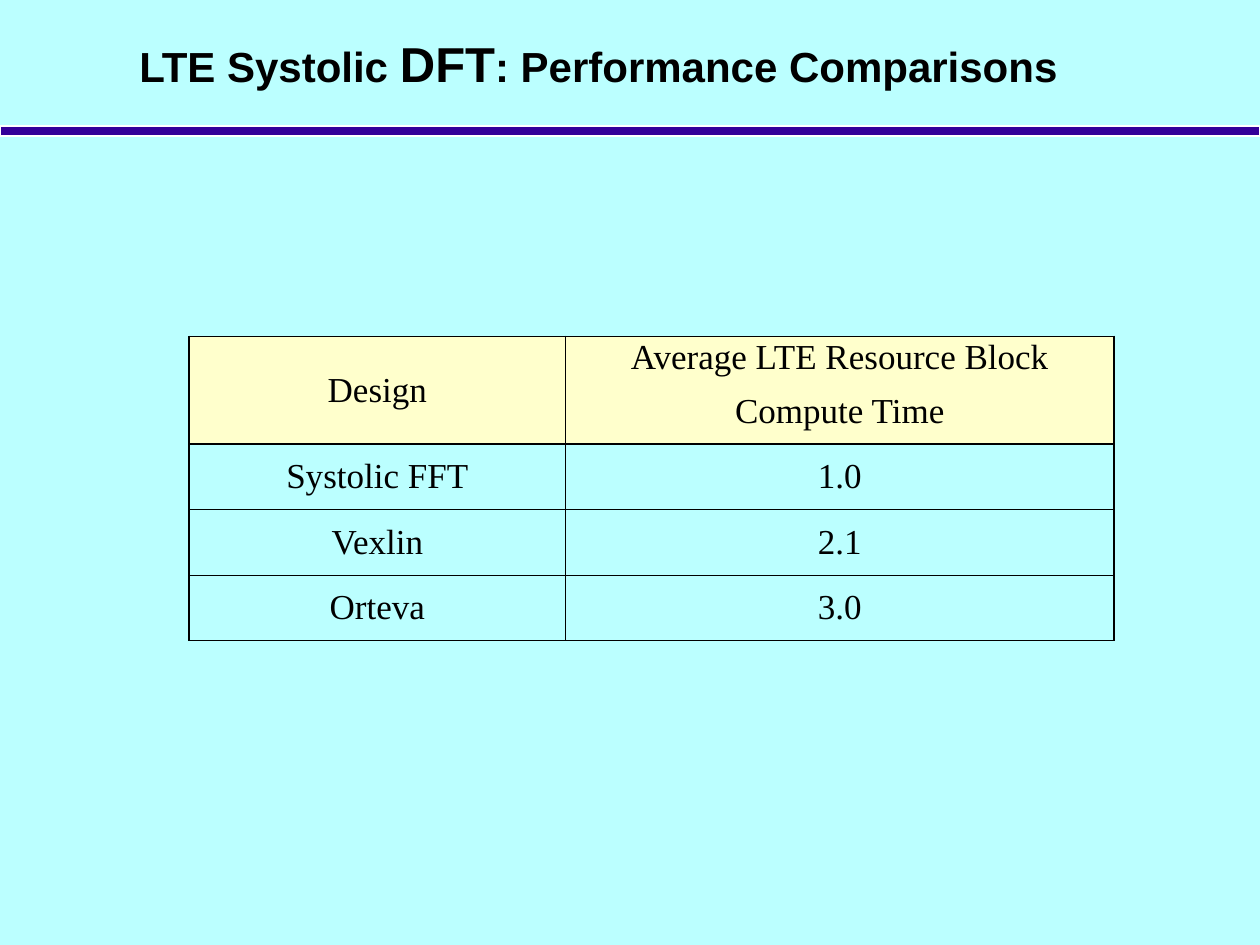
import pptx
import pptx.util
import pptx.dml.color
import pptx.enum.shapes
import pptx.enum.text
import pptx.oxml.ns
from lxml import etree

Inches, Pt = pptx.util.Inches, pptx.util.Pt
ALIGN = pptx.enum.text.PP_ALIGN.CENTER
MIDDLE = pptx.enum.text.MSO_ANCHOR.MIDDLE
COLORS = {"back": "BBFFFF", "bar": "330099", "edge": "FFFFFF",
          "head": "FFFFCC", "ink": "000000"}
ROWS = [("Design", "Average LTE Resource Block"), ("", "Compute Time"),
        ("Systolic FFT", "1.0"), ("Vexlin", "2.1"), ("Orteva", "3.0")]
HEAD = 2  # number of header rows
THICK, THIN = 1, 0.5


def color(name):
    return pptx.dml.color.RGBColor.from_string(COLORS[name])


def style(font, face, size, bold=False):
    font.name, font.size, font.bold = face, Pt(size), bold
    font.color.rgb = color("ink")


def rule(slide, left, top, width, height):
    bar = slide.shapes.add_shape(pptx.enum.shapes.MSO_SHAPE.RECTANGLE,
                                 left, top, width, height)
    bar.shadow.inherit = False
    bar.fill.solid()
    bar.fill.fore_color.rgb = color("bar")
    bar.line.color.rgb = color("edge")
    bar.line.width = Pt(1)


def title(slide, left, top, width, height):
    frame = slide.shapes.add_textbox(left, top, width, height).text_frame
    frame.word_wrap = True
    frame.vertical_anchor = MIDDLE
    para = frame.paragraphs[0]
    para.alignment = ALIGN
    for text, size in (("LTE Systolic ", 24), ("DFT", 28),
                       (": Performance Comparisons", 24)):
        run = para.add_run()
        run.text = text
        style(run.font, "Arial", size, True)


def border(cell, side, width):
    """Draw one cell edge; a width of 0 hides it."""
    qn = pptx.oxml.ns.qn
    props = cell._tc.get_or_add_tcPr()
    line = etree.SubElement(props, qn("a:ln" + side), w=str(Pt(width)))
    if width:
        fill = etree.SubElement(line, qn("a:solidFill"))
        etree.SubElement(fill, qn("a:srgbClr"), val=COLORS["ink"])
    else:
        etree.SubElement(line, qn("a:noFill"))


def edges(row, col):
    """Outer frame and header base are thick, inner lines thin."""
    def level(num):
        if num == 1:
            return 0
        return THICK if num in (0, HEAD, len(ROWS)) else THIN
    return {"L": THIN if col else THICK, "R": THICK if col else THIN,
            "T": level(row), "B": level(row + 1)}


def results(slide, left, top, width, height):
    table = slide.shapes.add_table(len(ROWS), 2, left, top, width, height).table
    table.first_row = table.horz_banding = False
    table.columns[0].width = Inches(2.99)
    table.columns[1].width = width - Inches(2.99)
    for row, texts in enumerate(ROWS):
        table.rows[row].height = Inches(0.52 if row else 0.29)
        for col, text in enumerate(texts):
            cell = table.cell(row, col)
            for side, weight in edges(row, col).items():
                border(cell, side, weight)
            if row < HEAD:
                cell.fill.solid()
                cell.fill.fore_color.rgb = color("head")
            else:
                cell.fill.background()
            cell.margin_left = cell.margin_right = Inches(0.07)
            cell.margin_top = cell.margin_bottom = 0
            cell.vertical_anchor = MIDDLE
            cell.text = text
            para = cell.text_frame.paragraphs[0]
            para.alignment = ALIGN
            style(para.font, "Times New Roman", 20)
    table.cell(0, 0).merge(table.cell(HEAD - 1, 0))


def main():
    deck = pptx.Presentation()
    deck.slide_width, deck.slide_height = Inches(10), Inches(7.5)
    slide = deck.slides.add_slide(deck.slide_layouts[6])
    slide.background.fill.solid()
    slide.background.fill.fore_color.rgb = color("back")
    # Heading with its rule, then the comparison table
    rule(slide, 0, Inches(1), Inches(10), Inches(0.08))
    title(slide, Inches(0.5), 0, Inches(8.5), Inches(1))
    results(slide, Inches(1.5), Inches(2.67), Inches(7.34), Inches(2.37))
    deck.save("out.pptx")


if __name__ == "__main__":
    main()
